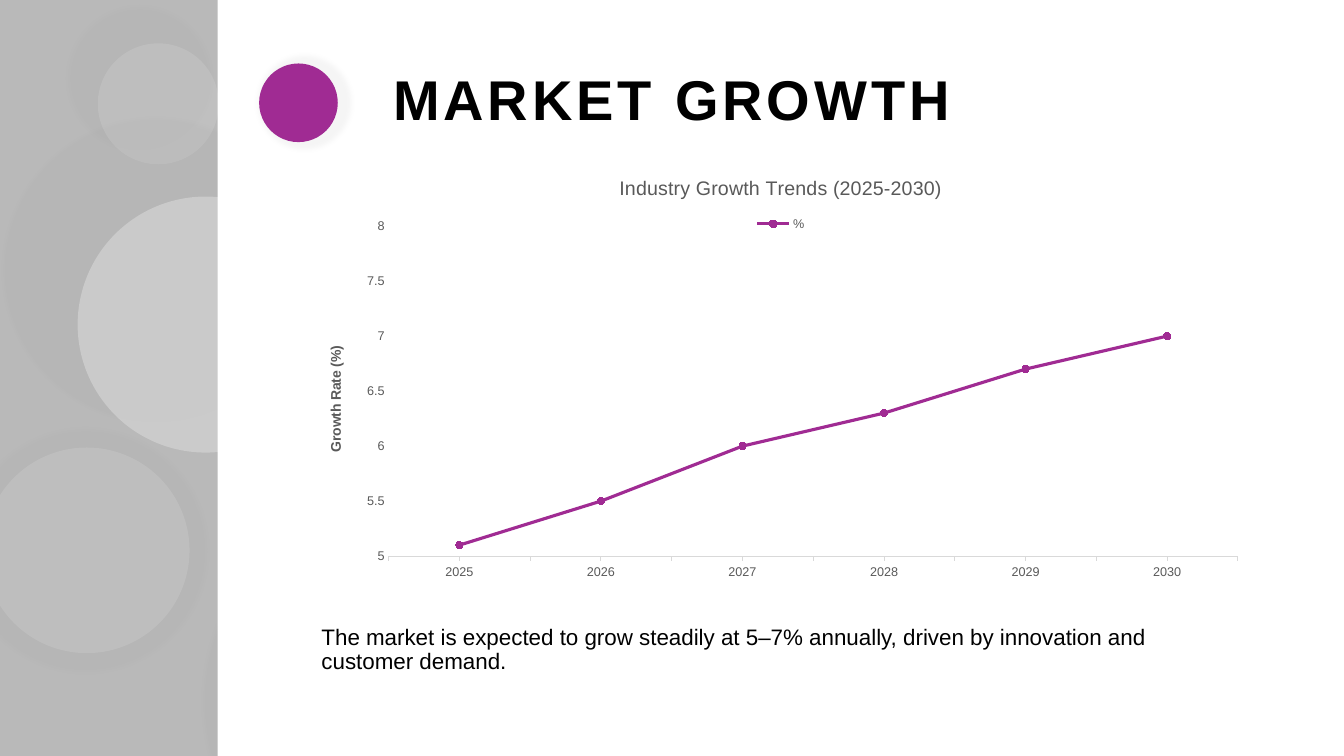
import math

import pptx
import pptx.chart.data
import pptx.dml.color
import pptx.enum.chart
import pptx.enum.shapes
import pptx.enum.text
import pptx.oxml
import pptx.oxml.ns
import pptx.util

Inches = pptx.util.Inches
SLIDE_WIDTH, SLIDE_HEIGHT = 13.33, 7.5
PURPLE, GREY = "A02B93", "595959"
BUBBLES = {
    ("D1D1D1", 30): [
        (4.32, 2.48, 1.27), (3.38, 3.95, 1), (7.39, 4.28, 1.73),
        (1.57, 1.03, 0.6, -0.19, -0.25), (8.75, 0.68, 1.02), (0.86, 5.46, 1.02),
        (12.79, 1.71, 0.79), (12.43, 4.95, 1.02), (10.1, 6.81, 0.8)],
    ("E8E8E8", 40): [
        (2.04, 3.22, 1.27, -0.5, -0.54), (4.07, 6.86, 1.73), (8.35, 1.54, 0.6),
        (10.14, 0.73, 1.02), (5.62, 0.07, 0.73), (9.05, 5.83, 1.02), (10.52, 3.98, 0.8)],
}
GROWTH = {"2025": 5.1, "2026": 5.5, "2027": 6, "2028": 6.3, "2029": 6.7, "2030": 7}
SERIES = [("%", list(GROWTH.values()), PURPLE),
          ("Series 2", [None] * len(GROWTH), "E97132"),
          ("Series 3", [None] * len(GROWTH), "196B24")]


def color(hex_string):
    """Turn a hex string into a colour."""
    return pptx.dml.color.RGBColor.from_string(hex_string)


def make_xml(xml, prefix="a"):
    """Parse an element whose first tag still lacks its namespace."""
    return pptx.oxml.parse_xml(xml.replace(" ", f" {pptx.oxml.ns.nsdecls(prefix)} ", 1))


def paint(shape, fill, opacity=100):
    """Give a shape a plain fill with no line and no shadow."""
    shape.shadow.inherit = False
    shape.fill.solid()
    shape.fill.fore_color.rgb = color(fill)
    shape.line.fill.background()
    if opacity < 100:
        fill_color = shape.fill._xPr.find(".//" + pptx.oxml.ns.qn("a:srgbClr"))
        fill_color.append(make_xml(f'<a:alpha val="{opacity * 1000}"/>'))


def format_font(font, size, fill="000000", bold=False):
    """Set a font from size, colour and weight."""
    values = {"name": "Arial", "size": pptx.util.Pt(size), "bold": bold}
    for attribute, value in values.items():
        setattr(font, attribute, value)
    font.color.rgb = color(fill)


def cut_disc(disc_box, x, y, radius, builder):
    """Build a disc that ends in a straight side at the slide edge."""
    left, top, right, bottom = disc_box
    corners = [(right, top), (right, bottom), (left, bottom)]
    builder.add_line_segments([(Inches(a), Inches(b)) for a, b in corners], close=True)
    disc = builder.convert_to_shape()
    edge_gaps = [SLIDE_WIDTH - x, SLIDE_HEIGHT - y, x, y]
    gap = min(edge_gaps)
    half = math.degrees(math.acos(gap / radius))
    start = (edge_gaps.index(gap) * 90 + half) % 360
    start_x = Inches(x + radius * math.cos(math.radians(start)) - left)
    start_y = Inches(y + radius * math.sin(math.radians(start)) - top)
    outline = disc._element.find(".//" + pptx.oxml.ns.qn("a:path"))
    for step in list(outline):
        outline.remove(step)
    for step in (f'<a:moveTo ><a:pt x="{start_x}" y="{start_y}"/></a:moveTo>',
                 f'<a:arcTo wR="{Inches(radius)}" hR="{Inches(radius)}" '
                 f'stAng="{round(start * 60000)}" swAng="{round((360 - 2 * half) * 60000)}"/>',
                 '<a:close />'):
        outline.append(make_xml(step))
    return disc


def add_disc(slide, fill, opacity, x, y, radius, shadow_x=0, shadow_y=0):
    """Draw a disc around a centre, with a faint, larger shadow."""
    left, top = max(0, x - radius), max(0, y - radius)
    right, bottom = min(SLIDE_WIDTH, x + radius), min(SLIDE_HEIGHT, y + radius)
    if min(right - left, bottom - top) > 2 * radius - 0.01:
        disc = slide.shapes.add_shape(
            pptx.enum.shapes.MSO_SHAPE.OVAL, Inches(left), Inches(top),
            Inches(2 * radius), Inches(2 * radius))
    else:
        builder = slide.shapes.build_freeform(Inches(left), Inches(top))
        disc = cut_disc((left, top, right, bottom), x, y, radius, builder)
    paint(disc, fill, opacity)
    distance = Inches(math.hypot(shadow_x, shadow_y))
    direction = round(math.degrees(math.atan2(shadow_y, shadow_x)) % 360 * 60000)
    effects = disc._element.spPr.find(pptx.oxml.ns.qn("a:effectLst"))
    effects.append(make_xml(
        f'<a:outerShdw blurRad="50800" dist="{distance}" dir="{direction}" '
        'sx="118000" sy="118000" algn="ctr" rotWithShape="0">'
        '<a:srgbClr val="000000"><a:alpha val="4000"/></a:srgbClr></a:outerShdw>'))


def add_backdrop(slide, left, top, width, height):
    """Lay grey bubbles under the white content panel."""
    slide.background.fill.solid()
    slide.background.fill.fore_color.rgb = color("B9B9B9")
    for tone, bubbles in BUBBLES.items():
        for bubble in bubbles:
            add_disc(slide, *tone, *bubble)
    panel = slide.shapes.add_shape(
        pptx.enum.shapes.MSO_SHAPE.RECTANGLE,
        Inches(left), Inches(top), Inches(width), Inches(height))
    paint(panel, "FFFFFF")


def add_heading(slide, left, top, width, height):
    """Place the purple dot and the title to its right."""
    title = slide.shapes.title
    indent = 1.23
    box = {"left": left + indent, "top": top, "width": width - indent, "height": height}
    for attribute, value in box.items():
        setattr(title, attribute, Inches(value))
    frame = title.text_frame
    frame.text = "MARKET GROWTH"
    frame.auto_size = pptx.enum.text.MSO_AUTO_SIZE.NONE
    frame.vertical_anchor = pptx.enum.text.MSO_ANCHOR.MIDDLE
    heading = frame.paragraphs[0]
    heading.alignment = pptx.enum.text.PP_ALIGN.LEFT
    heading.line_spacing = 0.88
    format_font(heading.runs[0].font, 40, bold=True)
    heading.runs[0].font._element.set("spc", "280")
    add_disc(slide, PURPLE, 100, left + 0.39, top + 0.54, 0.39, 0.06)


def add_caption(slide, left, top, width, height):
    """Place the sentence below the chart."""
    frame = slide.shapes.add_textbox(
        Inches(left), Inches(top), Inches(width), Inches(height)).text_frame
    frame.word_wrap = True
    frame.text = ("The market is expected to grow steadily at 5–7% annually, "
                  "driven by innovation and customer demand.")
    frame.paragraphs[0].line_spacing = 0.9
    format_font(frame.paragraphs[0].runs[0].font, 16)


def label(owner, text, size, bold=False):
    """Write the title of a chart or an axis."""
    owner.text_frame.text = text
    format_font(owner.text_frame.paragraphs[0].runs[0].font, size, GREY, bold)


def format_axes(chart):
    """Format both axes of the growth chart."""
    marks = pptx.enum.chart.XL_TICK_MARK
    years, rate = chart.category_axis, chart.value_axis
    formats = {
        years: {"minor_tick_mark": marks.OUTSIDE},
        rate: {"minor_tick_mark": marks.NONE, "minimum_scale": 5,
               "maximum_scale": 8, "major_unit": 0.5},
    }
    for axis, values in formats.items():
        shared = {"major_tick_mark": marks.NONE, "has_major_gridlines": False}
        for attribute, value in (shared | values).items():
            setattr(axis, attribute, value)
        format_font(axis.tick_labels.font, 9, GREY)
    years.format.line.color.rgb = color("D9D9D9")
    years.format.line.width = pptx.util.Pt(0.75)
    rate.format.line.fill.background()
    label(rate.axis_title, "Growth Rate (%)", 10, bold=True)


def set_plot_area(chart, **fractions):
    """Fix the inner plot area as fractions of the chart."""
    area = chart._chartSpace.chart.plotArea
    for old in area.findall(pptx.oxml.ns.qn("c:layout")):
        area.remove(old)
    sizes = "".join(f'<c:{key} val="{value}"/>' for key, value in fractions.items())
    area.insert(0, make_xml(
        '<c:layout ><c:manualLayout><c:layoutTarget val="inner"/><c:xMode val="edge"/>'
        f'<c:yMode val="edge"/>{sizes}</c:manualLayout></c:layout>', "c"))


def add_growth_chart(slide, left, top, width, height):
    """Draw the yearly growth rate as a line with markers."""
    data = pptx.chart.data.CategoryChartData()
    data.categories = list(GROWTH)
    for name, values, _ in SERIES:
        data.add_series(name, values)
    chart = slide.shapes.add_chart(
        pptx.enum.chart.XL_CHART_TYPE.LINE_MARKERS, Inches(left), Inches(top),
        Inches(width), Inches(height), data).chart
    format_font(chart.font, 10)
    label(chart.chart_title, "Industry Growth Trends (2025-2030)", 14)
    chart.has_legend = True
    chart.legend.position = pptx.enum.chart.XL_LEGEND_POSITION.TOP
    chart.legend.include_in_layout = False
    format_font(chart.legend.font, 9, GREY)
    for index in (2, 1):
        chart.legend._element.insert(1, make_xml(
            f'<c:legendEntry ><c:idx val="{index}"/><c:delete val="1"/></c:legendEntry>', "c"))
    format_axes(chart)
    set_plot_area(chart, x=0.083, y=0.157, w=0.903, h=0.753)
    chart.plots[0].vary_by_categories = False
    for line, (_, _, tone) in zip(chart.plots[0].series, SERIES):
        line.smooth = False
        line.format.line.width = pptx.util.Pt(2.25)
        line.marker.style = pptx.enum.chart.XL_MARKER_STYLE.CIRCLE
        line.marker.size = 5
        line.marker.format.fill.solid()
        for part in (line.format.line, line.marker.format.fill, line.marker.format.line):
            target = part.fore_color if part is line.marker.format.fill else part.color \
                if hasattr(part, "color") else part.fore_color
            target.rgb = color(tone)


def main():
    """Build the market growth slide."""
    deck = pptx.Presentation()
    deck.slide_width, deck.slide_height = Inches(SLIDE_WIDTH), Inches(SLIDE_HEIGHT)
    slide = deck.slides.add_slide(deck.slide_layouts.get_by_name("Title Only"))
    add_backdrop(slide, 2.16, 0, SLIDE_WIDTH - 2.16, SLIDE_HEIGHT)
    slide.shapes._spTree.append(slide.shapes.title._element)
    add_heading(slide, 2.57, 0.48, 9.85, 1.07)
    add_caption(slide, 3.09, 6.16, 9.33, 0.59)
    add_growth_chart(slide, 3.08, 1.56, 9.33, 4.35)
    deck.save("out.pptx")


if __name__ == "__main__":
    main()
